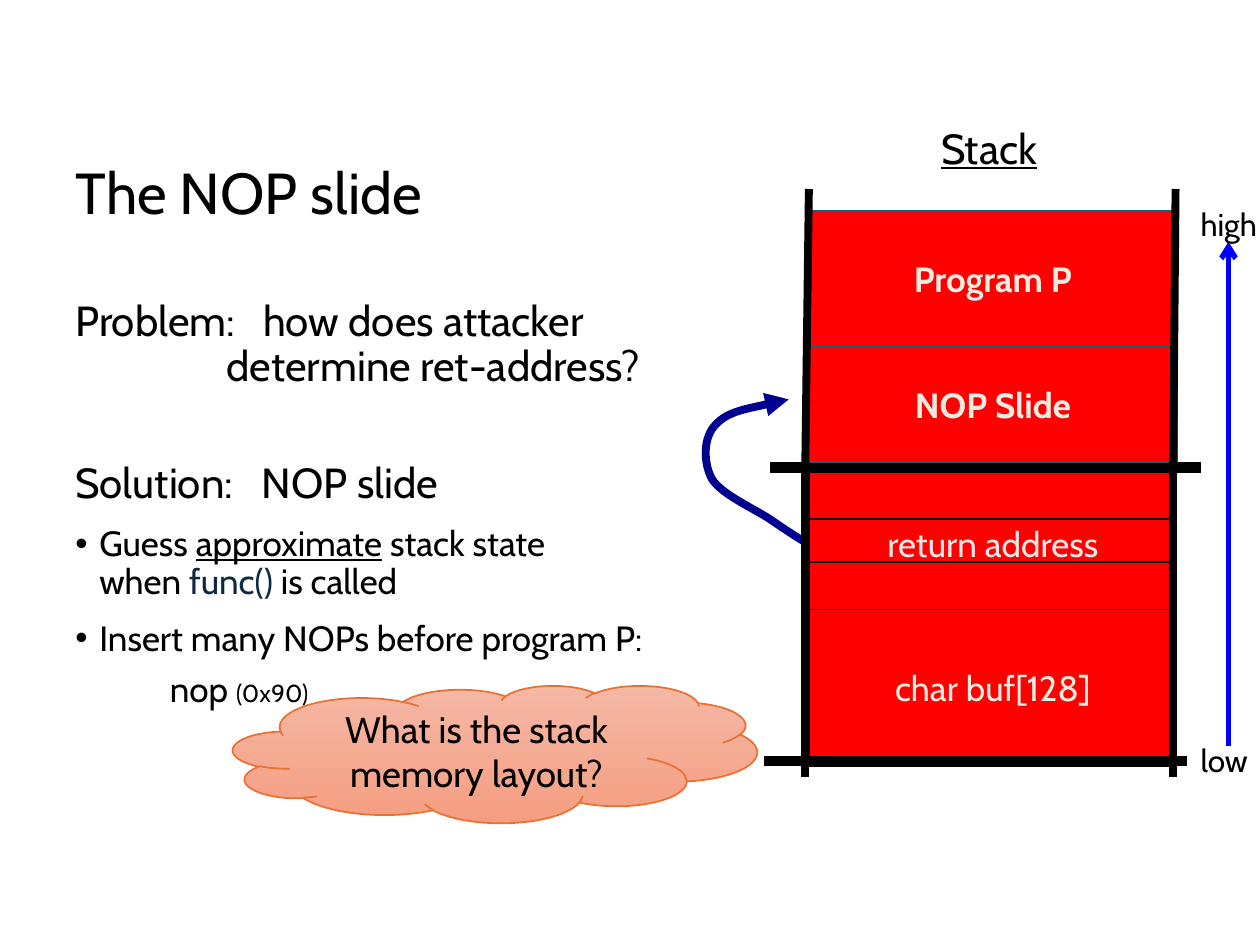
from dataclasses import dataclass, field

import lxml.etree
import pptx
import pptx.dml.color
import pptx.enum.shapes
import pptx.enum.text
import pptx.oxml
import pptx.oxml.ns
import pptx.util
from pptx.util import Inches, Pt

FONT = "Cabin"
BLACK, RED, TEAL, CREAM = "000000", "FF0000", "156082", "EEECE1"
CELL_LEFT, CELL_WIDTH = 6.42, 2.92
FRAME_LEFT, FRAME_RIGHT, FRAME_TOP, FRAME_BOTTOM = 6.39, 9.31, 3.71, 6.04
ALIGN = pptx.enum.text.PP_ALIGN
ANCHOR = pptx.enum.text.MSO_ANCHOR
SHAPE = pptx.enum.shapes.MSO_SHAPE


@dataclass
class Cell:
    top: float
    height: float
    text: str = ""
    text_color: str = CREAM
    bold: bool = False
    line_color: str = BLACK
    line_width: float = 0.75
    left: float = CELL_LEFT


@dataclass
class Line:
    start: tuple[float, float]
    end: tuple[float, float]
    width: float = 4.5
    color: str = BLACK
    arrow: str = ""


@dataclass
class Label:
    text: str
    left: float
    top: float
    width: float
    height: float = 0.4
    size: float = 18
    underline: bool = False


@dataclass
class Run:
    text: str
    size: float | None = None
    color: str | None = None
    underline: bool | None = None


@dataclass
class BodyParagraph:
    runs: list[Run]
    size: float = 20
    space_before: float = 0
    indent: float = 0
    bullet: bool = False
    tabs: list[float] = field(default_factory=list)


def rgb(color: str):
    return pptx.dml.color.RGBColor.from_string(color)


def add_element(parent, tag: str, **attributes: str):
    element = lxml.etree.SubElement(parent, pptx.oxml.ns.qn(tag))
    for name, value in attributes.items():
        element.set(name, value)
    return element


def set_font(font, size: float, color: str = BLACK, bold: bool = False) -> None:
    font.name, font.size, font.bold = FONT, Pt(size), bold
    font.color.rgb = rgb(color)


def set_line(line, color: str, width: float, arrow: str = "") -> None:
    line.color.rgb = rgb(color)
    line.width = Pt(width)
    if arrow:
        add_element(line._get_or_add_ln(), "a:tailEnd", type=arrow)


def add_shape(slide, kind, left: float, top: float, width: float, height: float):
    shape = slide.shapes.add_shape(kind, Inches(left), Inches(top), Inches(width), Inches(height))
    shape.shadow.inherit = False
    return shape


def write_centred(shape, text: str, size: float, color: str, bold: bool = False) -> None:
    shape.text_frame.vertical_anchor = ANCHOR.MIDDLE
    paragraph = shape.text_frame.paragraphs[0]
    paragraph.text = text
    paragraph.alignment = ALIGN.CENTER
    set_font(paragraph.font, size, color, bold)


def draw_cell(slide, cell: Cell) -> None:
    shape = add_shape(slide, SHAPE.RECTANGLE, cell.left, cell.top, CELL_WIDTH, cell.height)
    shape.fill.solid()
    shape.fill.fore_color.rgb = rgb(RED)
    set_line(shape.line, cell.line_color, cell.line_width)
    if cell.text:
        write_centred(shape, cell.text, 20, cell.text_color, cell.bold)


def draw_line(slide, line: Line) -> None:
    connector = slide.shapes.add_connector(
        pptx.enum.shapes.MSO_CONNECTOR.STRAIGHT, *map(Inches, line.start + line.end))
    add_element(connector._element.spPr, "a:effectLst")
    set_line(connector.line, line.color, line.width, line.arrow)


def draw_label(slide, label: Label) -> None:
    box = slide.shapes.add_textbox(*map(Inches, (label.left, label.top, label.width, label.height)))
    box.text_frame.word_wrap = False
    box.text_frame.auto_size = pptx.enum.text.MSO_AUTO_SIZE.SHAPE_TO_FIT_TEXT
    paragraph = box.text_frame.paragraphs[0]
    paragraph.text = label.text
    set_font(paragraph.font, label.size)
    paragraph.font.underline = label.underline


def draw_curve(slide, points: list[tuple[float, float]], color: str, width: float) -> None:
    """Draw Bezier segments: a start point, then three points per segment."""
    start, *others = [(Inches(x), Inches(y)) for x, y in points]
    builder = slide.shapes.build_freeform(*start)
    builder.add_line_segments(others, close=False)
    shape = builder.convert_to_shape()
    shape.shadow.inherit = False
    shape.fill.background()
    set_line(shape.line, color, width, "triangle")
    path = next(shape._element.iter(pptx.oxml.ns.qn("a:path")))
    steps = list(path)[1:]
    for first in range(0, len(steps), 3):
        curve = add_element(path, "a:cubicBezTo")
        for step in steps[first:first + 3]:
            curve.append(step[0])
            path.remove(step)


def write_body_paragraph(paragraph, content: BodyParagraph) -> None:
    properties = paragraph._p.get_or_add_pPr()
    properties.set("marL", str(Inches(content.indent)))
    if content.bullet:
        properties.set("indent", str(-Inches(content.indent)))
        add_element(properties, "a:buFont", typeface="Arial")
        add_element(properties, "a:buChar", char="•")
    if content.tabs:
        tab_list = add_element(properties, "a:tabLst")
        for position in content.tabs:
            add_element(tab_list, "a:tab", pos=str(Inches(position)), algn="l")
    paragraph.line_spacing = 0.9
    if content.space_before:
        paragraph.space_before = Pt(content.space_before)
    set_font(paragraph.font, content.size)
    for item in content.runs:
        if item.text == "\n":
            paragraph.add_line_break()
            continue
        run = paragraph.add_run()
        run.text = item.text
        if item.size:
            run.font.size = Pt(item.size)
        if item.color:
            run.font.color.rgb = rgb(item.color)
        if item.underline:
            run.font.underline = True


BODY = [
    BodyParagraph([Run("Problem:\thow does attacker"), Run("\n"),
                   Run("\tdetermine ret-address?")], 24, tabs=[1.2, 1.49]),
    BodyParagraph([Run("Solution:\tNOP slide")], 24, 41, tabs=[1.48]),
    BodyParagraph([Run("Guess "), Run("approximate", underline=True), Run(" stack state"),
                   Run("\n"), Run("when "), Run("func()", color="0E2841"),
                   Run(" is called")], 20, 10.8, 0.19, True),
    BodyParagraph([Run("Insert many NOPs before program P:")], 20, 10.8, 0.19, True),
    BodyParagraph([Run("nop "), Run("(0x90)", size=14)], 20, 7.5, 0.75),
]
FRAME_CELLS = [
    Cell(3.75, 0.38),
    Cell(4.83, 1.25, left=FRAME_LEFT),
    Cell(4.83, 1.25, "char buf[128]"),
    Cell(4.12, 0.38, "return address", "E8E8E8"),
    Cell(4.46, 0.38),
]
FRAME_LINES = [
    Line((6.06, FRAME_BOTTOM), (9.42, FRAME_BOTTOM), 6),
    Line((6.11, FRAME_TOP), (9.53, FRAME_TOP), 6),
    Line((FRAME_LEFT, 5.58), (FRAME_LEFT, 6.17)),
]
PROGRAM_CELLS = [
    Cell(2.75, 0.92, "NOP Slide", bold=True, line_color=TEAL, line_width=1),
    Cell(1.67, 1.08, "Program P", bold=True, line_color=TEAL, line_width=1),
]
SIDE_LINES = [
    Line((FRAME_RIGHT, 5.58), (FRAME_RIGHT, 6.17)),
    Line((9.33, 1.5), (FRAME_RIGHT, 3.79)),
    Line((9.75, 5.92), (9.75, 1.92), 3, "0000FF", "arrow"),
]
JUMP = [(6.4, 4.31), (6.32, 4.26), (6.24, 4.21), (6.11, 4.12),
        (5.99, 4.04), (5.72, 3.92), (5.65, 3.8),
        (5.58, 3.67), (5.58, 3.47), (5.68, 3.37),
        (5.78, 3.26), (6.26, 3.17), (6.26, 3.17)]
LABELS = [
    Label("low", 9.43, 5.83, 0.59),
    Label("high", 9.43, 1.58, 0.66),
    Label("Stack", 7.37, 0.92, 1.02, 0.5, 24, True),
]


def main() -> None:
    presentation = pptx.Presentation()
    presentation.slide_width, presentation.slide_height = Inches(10), Inches(7.5)
    slide = presentation.slides.add_slide(presentation.slide_layouts[5])

    # Title
    title = slide.shapes.title
    title.left, title.top, title.width, title.height = map(Inches, (0.5, 1.08, 4.33, 0.94))
    title.text_frame.vertical_anchor = ANCHOR.MIDDLE
    paragraph = title.text_frame.paragraphs[0]
    paragraph.text = "The NOP slide"
    paragraph.alignment = ALIGN.LEFT
    paragraph.line_spacing = 0.9
    set_font(paragraph.font, 33)

    # Problem and solution
    body = slide.shapes.add_textbox(*map(Inches, (0.5, 2.33, 5.44, 4))).text_frame
    body.word_wrap = True
    for index, content in enumerate(BODY):
        write_body_paragraph(body.add_paragraph() if index else body.paragraphs[0], content)

    # Stack
    for cell in FRAME_CELLS:
        draw_cell(slide, cell)
    for line in FRAME_LINES:
        draw_line(slide, line)
    for cell in PROGRAM_CELLS:
        draw_cell(slide, cell)
    draw_line(slide, Line((CELL_LEFT, 1.5), (FRAME_LEFT, 3.79)))
    draw_curve(slide, JUMP, "000090", 4.5)
    frame = add_shape(slide, SHAPE.RECTANGLE, FRAME_LEFT, FRAME_TOP,
                      FRAME_RIGHT - FRAME_LEFT, FRAME_BOTTOM - FRAME_TOP)
    frame.fill.background()
    set_line(frame.line, BLACK, 4.5)
    for line in SIDE_LINES:
        draw_line(slide, line)
    for label in LABELS:
        draw_label(slide, label)

    # Question cloud
    cloud = add_shape(slide, SHAPE.CLOUD, 1.85, 5.44, 4.16, 1.09)
    cloud.fill.gradient()
    cloud.fill.gradient_angle = 270
    for stop, color in zip(cloud.fill.gradient_stops, ("F5B8A5", "F59E82")):
        stop.color.rgb = rgb(color)
    set_line(cloud.line, "E97132", 1)
    write_centred(cloud, "What is the stack memory layout?", 21, BLACK)

    presentation.save("out.pptx")


if __name__ == "__main__":
    main()
